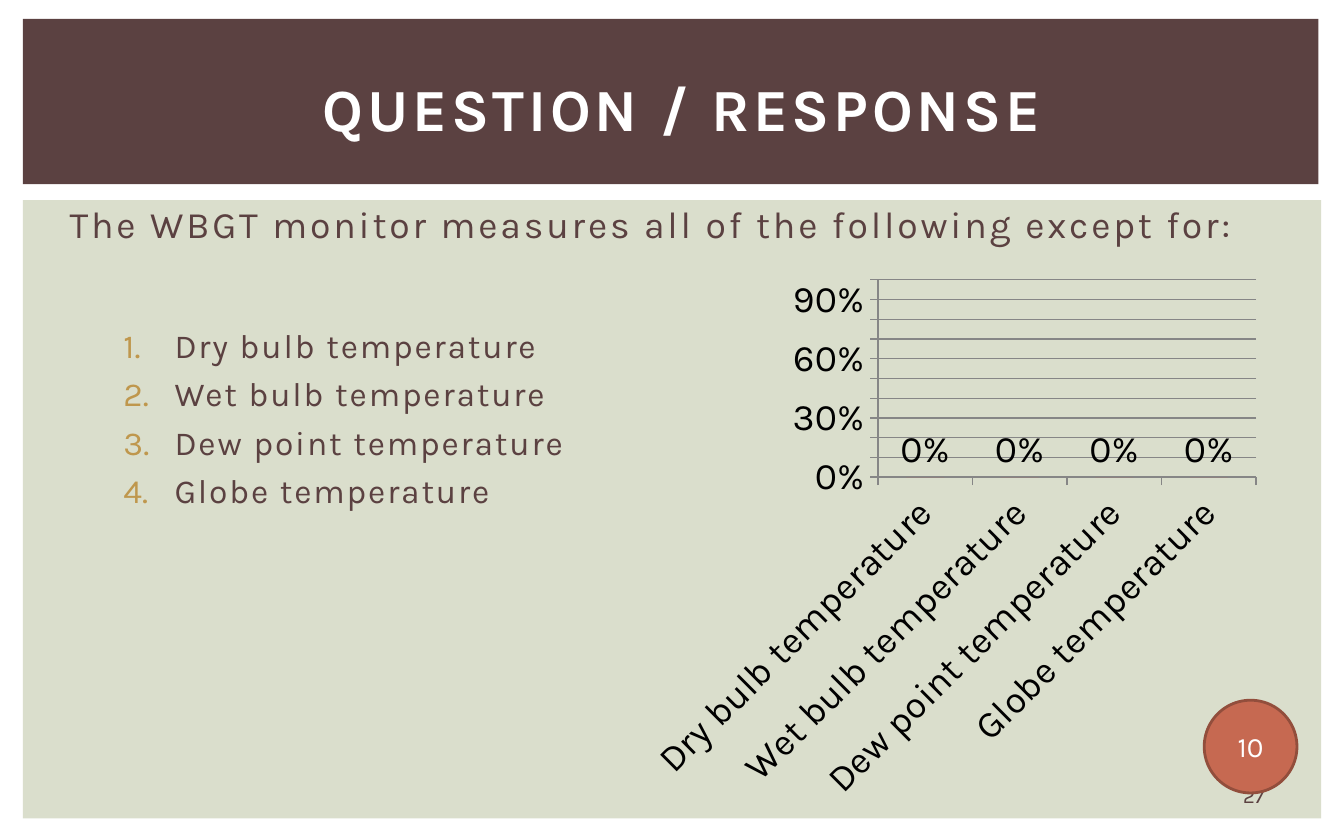
from dataclasses import dataclass

from lxml import etree
from pptx import Presentation
from pptx import util as u
from pptx.chart import data as chart_data
from pptx.dml.color import RGBColor
from pptx.enum import chart as charts, shapes, text
from pptx.oxml import ns

SCALE = 9144


@dataclass(frozen=True)
class Theme:
    font: str = "Karla"
    panel: str = "DADECC"
    brown: str = "5B4141"
    white: str = "FFFFFF"
    black: str = "000000"
    gold: str = "BF974D"
    accent: str = "C66951"
    accent_edge: str = "924E3C"
    grid: str = "868686"
    title: int = 32
    question: int = 20
    answer: int = 18
    chart: int = 20
    badge: int = 15
    number: int = 11


THEME = Theme()


def px(value):
    return u.Emu(value * SCALE)


def place(box):
    return [px(value) for value in box]


def inset(box, left, top, width, height):
    return box[0] + left, box[1] + top, width, height


def style(font, size, color):
    font.name = THEME.font
    font.size = u.Pt(size)
    font.color.rgb = RGBColor.from_string(color)


def add_span(para, wording, size, color, spacing=0, bold=False):
    span = para.add_run()
    span.text = wording
    style(span.font, size, color)
    span.font.bold = bold
    if spacing:
        span.font._element.set("spc", str(spacing))


def add_panel(page, kind, box, fill):
    panel = page.shapes.add_shape(kind, *place(box))
    panel.shadow.inherit = False
    panel.fill.solid()
    panel.fill.fore_color.rgb = RGBColor.from_string(fill)
    panel.line.fill.background()
    return panel


def add_text(page, box, anchor=text.MSO_ANCHOR.TOP):
    frame = page.shapes.add_textbox(*place(box)).text_frame
    frame.word_wrap = True
    frame.vertical_anchor = anchor
    return frame


def add_header(page, box):
    add_panel(page, shapes.MSO_SHAPE.RECTANGLE, box, THEME.brown)
    frame = add_text(page, inset(box, 25, 18, 917, 96), text.MSO_ANCHOR.MIDDLE)
    para = frame.paragraphs[0]
    para.alignment = text.PP_ALIGN.CENTER
    add_span(para, " QUESTION / RESPONSE", THEME.title, THEME.white, 200, True)


def add_page_number(page, box):
    para = add_text(page, box, text.MSO_ANCHOR.MIDDLE).paragraphs[0]
    para.alignment = text.PP_ALIGN.CENTER
    add_span(para, "27", THEME.number, THEME.brown)


def add_question(page, box):
    para = add_text(page, box).paragraphs[0]
    add_span(para, "The WBGT monitor measures all of the following except for:",
             THEME.question, THEME.brown, 150)


def number_para(para):
    props = para._p.get_or_add_pPr()
    props.set("marL", str(px(78)))
    props.set("indent", str(px(-38)))
    color = etree.SubElement(props, ns.qn("a:buClr"))
    etree.SubElement(color, ns.qn("a:srgbClr"), val=THEME.gold)
    etree.SubElement(props, ns.qn("a:buFont"), typeface=THEME.font)
    etree.SubElement(props, ns.qn("a:buAutoNum"), type="arabicPeriod")


def add_answers(page, box, answers):
    frame = add_text(page, box)
    for index, answer in enumerate(answers):
        para = frame.add_paragraph() if index else frame.paragraphs[0]
        number_para(para)
        if index:
            para.space_before = u.Pt(4.2)
        add_span(para, answer, THEME.answer, THEME.brown, 100)


def fix_plot_area(chart, **fractions):
    area = chart._chartSpace.chart.plotArea
    for old in area.findall(ns.qn("c:layout")):
        area.remove(old)
    layout = etree.Element(ns.qn("c:layout"))
    area.insert(0, layout)
    manual = etree.SubElement(layout, ns.qn("c:manualLayout"))
    settings = dict(layoutTarget="inner", xMode="edge", yMode="edge", **fractions)
    for name, value in settings.items():
        etree.SubElement(manual, ns.qn("c:" + name), val=str(value))


def add_response_chart(page, box, answers):
    data = chart_data.CategoryChartData(number_format="0%")
    data.categories = answers
    data.add_series("Series 1", [0] * len(answers))
    chart = page.shapes.add_chart(
        charts.XL_CHART_TYPE.COLUMN_CLUSTERED, *place(box), data).chart
    chart.has_legend = False
    chart.has_title = False
    style(chart.font, THEME.chart, THEME.black)
    fix_plot_area(chart, x=0.38, y=0.03, w=0.6, h=0.36)

    plot = chart.plots[0]
    plot.vary_by_categories = False
    plot.gap_width = 150
    fill = plot.series[0].format.fill
    fill.solid()
    fill.fore_color.rgb = RGBColor.from_string(THEME.accent)
    plot.has_data_labels = True
    labels = plot.data_labels
    labels.show_value = True
    labels.number_format = "0%"
    labels.number_format_is_linked = False
    labels.position = charts.XL_LABEL_POSITION.OUTSIDE_END
    style(labels.font, THEME.chart, THEME.black)

    value_axis = chart.value_axis
    value_axis.minimum_scale = 0
    value_axis.maximum_scale = 1
    value_axis.major_unit = 0.1
    value_axis.has_major_gridlines = True
    value_axis.tick_labels.number_format = "0%"
    value_axis.tick_labels.number_format_is_linked = False
    for axis in (value_axis, chart.category_axis):
        axis.major_tick_mark = charts.XL_TICK_MARK.OUTSIDE
        style(axis.tick_labels.font, THEME.chart, THEME.black)
    for part in (value_axis, chart.category_axis, value_axis.major_gridlines):
        part.format.line.color.rgb = RGBColor.from_string(THEME.grid)
        part.format.line.width = u.Pt(0.75)
    body = chart.category_axis._element.find(ns.qn("c:txPr")).find(ns.qn("a:bodyPr"))
    body.set("rot", str(-45 * 60000))


def add_badge(page, box):
    badge = add_panel(page, shapes.MSO_SHAPE.OVAL, box, THEME.accent)
    badge.line.color.rgb = RGBColor.from_string(THEME.accent_edge)
    badge.line.width = u.Pt(1.5)
    frame = badge.text_frame
    frame.word_wrap = False
    frame.vertical_anchor = text.MSO_ANCHOR.MIDDLE
    frame.margin_left = frame.margin_right = 0
    frame.margin_top = frame.margin_bottom = 0
    para = frame.paragraphs[0]
    para.alignment = text.PP_ALIGN.CENTER
    add_span(para, "10", THEME.badge, THEME.white)


def add_content(page, box):
    answers = [f"{kind} temperature"
               for kind in ("Dry bulb", "Wet bulb", "Dew point", "Globe")]
    add_panel(page, shapes.MSO_SHAPE.RECTANGLE, box, THEME.panel)
    add_page_number(page, inset(box, 884, 430, 64, 25))
    add_question(page, inset(box, 25, -4, 917, 75))
    add_answers(page, inset(box, 25, 88, 448, 321), answers)
    add_response_chart(page, inset(box, 458, 47, 469, 408), answers)
    add_badge(page, inset(box, 879, 372, 69, 69))


def main():
    deck = Presentation()
    deck.slide_width, deck.slide_height = px(1000), px(625)
    page = deck.slides.add_slide(deck.slide_layouts[6])
    add_header(page, (17, 14, 964, 123))
    add_content(page, (17, 149, 966, 460))
    deck.save("out.pptx")


if __name__ == "__main__":
    main()
